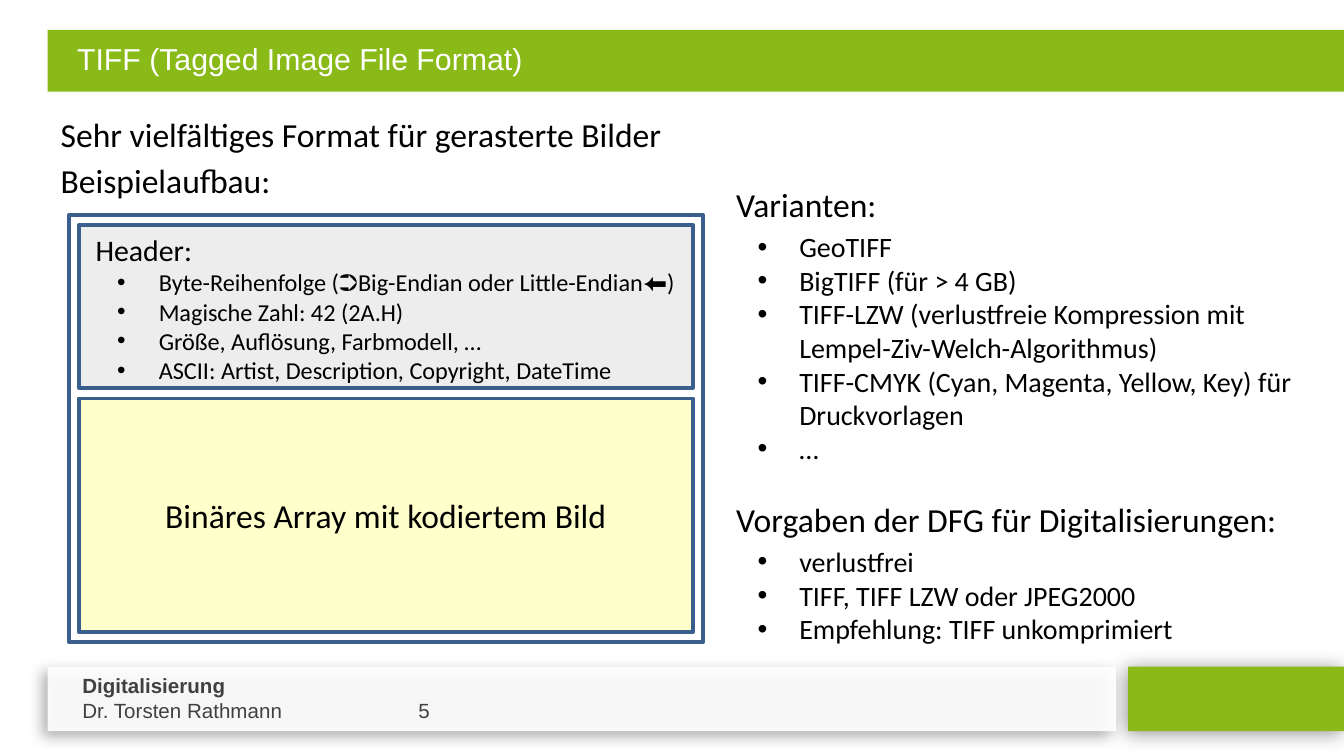
from dataclasses import dataclass

from lxml.etree import SubElement
from pptx import Presentation
from pptx.dml.color import RGBColor
from pptx.enum.shapes import MSO_SHAPE
from pptx.enum.text import MSO_ANCHOR, MSO_AUTO_SIZE, PP_ALIGN
from pptx.oxml.ns import qn
from pptx.util import Inches, Pt

UNIT = 0.1  # inches in one grid column or row


@dataclass(frozen=True)
class Theme:
    green: str = "89BA17"
    white: str = "FFFFFF"
    black: str = "000000"
    dark: str = "404040"
    grey: str = "A6A6A6"
    yellow: str = "FFFF00"
    outline: str = "3A5F8C"
    heading_font: str = "Arial"
    body_font: str = "Calibri"
    title: float = 16.2
    lead: float = 18
    header: float = 16
    item: float = 15
    small_item: float = 13
    footer: float = 11


THEME = Theme()


@dataclass(frozen=True)
class Box:
    """A region in grid columns and rows."""
    left: float
    top: float
    width: float
    height: float

    def inner(self, left, top, width, height):
        return Box(self.left + left, self.top + top, width, height)

    def inches(self):
        return [Inches(side * UNIT)
                for side in (self.left, self.top, self.width, self.height)]


def add_panel(page, box, fill=None, opacity=100, line=None, shadow=None):
    """Shadow is opacity in percent, blur and distance in points, angle in degrees."""
    panel = page.shapes.add_shape(MSO_SHAPE.RECTANGLE, *box.inches())
    panel.shadow.inherit = False
    if fill:
        panel.fill.solid()
        panel.fill.fore_color.rgb = RGBColor.from_string(fill)
        if opacity < 100:
            color = panel.element.spPr.find(".//" + qn("a:srgbClr"))
            SubElement(color, qn("a:alpha"), val=str(opacity * 1000))
    else:
        panel.fill.background()
    if line:
        panel.line.color.rgb = RGBColor.from_string(line)
        panel.line.width = Pt(2)
    else:
        panel.line.fill.background()
    if shadow:
        strength, blur, distance, angle = shadow
        effects = panel.element.spPr.find(qn("a:effectLst"))
        outer = SubElement(effects, qn("a:outerShdw"), blurRad=str(Pt(blur)),
                           dist=str(Pt(distance)), dir=str(angle * 60000),
                           algn="ctr", rotWithShape="0")
        color = SubElement(outer, qn("a:srgbClr"), val=THEME.black)
        SubElement(color, qn("a:alpha"), val=str(strength * 1000))
    return panel


def place_holder(holder, box):
    """Move a placeholder to a box, in front of the panels drawn so far."""
    holder.left, holder.top, holder.width, holder.height = box.inches()
    holder.element.getparent().append(holder.element)
    holder.text_frame.auto_size = MSO_AUTO_SIZE.NONE
    holder.text_frame.vertical_anchor = MSO_ANCHOR.TOP
    return holder.text_frame


def add_text_box(page, box, wrap=True):
    frame = page.shapes.add_textbox(*box.inches()).text_frame
    frame.word_wrap = wrap
    return frame


def write(frame, text, size, font=THEME.body_font, color=THEME.black, bold=False,
          align=PP_ALIGN.LEFT, bullet=False, indent=0, before=0, after=0):
    """Add one paragraph; indent is in inches."""
    first = frame.paragraphs[0]
    para = frame.add_paragraph() if first.runs else first
    para.alignment = align
    para.line_spacing = 1.0
    para.space_before, para.space_after = Pt(before), Pt(after)
    props = para._p.get_or_add_pPr()
    props.set("marL", str(Inches(0.47 if bullet else indent)))
    props.set("indent", str(Inches(-0.31 if bullet else 0)))
    if bullet:
        SubElement(props, qn("a:buFont"), typeface="Arial")
        SubElement(props, qn("a:buChar"), char="•")
    else:
        SubElement(props, qn("a:buNone"))
    span = para.add_run()
    span.text = text
    span.font.name, span.font.size, span.font.bold = font, Pt(size), bold
    span.font.color.rgb = RGBColor.from_string(color)


def write_list(frame, heading, items, heading_size, item_size, before=0, after=0):
    write(frame, heading, heading_size, before=before, after=after)
    for item in items:
        write(frame, item, item_size, bullet=True)


def draw_title(page, box):
    add_panel(page, box, THEME.green)
    frame = place_holder(page.shapes.title, box.inner(0, 0, box.width, 3.5))
    frame.margin_top = Inches(0.08)
    write(frame, "TIFF (Tagged Image File Format)", THEME.title,
          font=THEME.heading_font, color=THEME.white, indent=0.12)


def draw_footer(page, box):
    gap, end_width = 0.9, 16.1
    bar_width = box.width - end_width - gap
    add_panel(page, box.inner(bar_width + gap, 0, end_width, box.height),
              THEME.green, shadow=(42, 10.8, 2, 142))
    add_panel(page, box.inner(0, 0, bar_width, box.height),
              THEME.white, opacity=91, shadow=(34, 7.5, 4, 145))
    frame = add_text_box(page, box.inner(1.6, 0, 59.8, 4.7))
    style = dict(size=THEME.footer, font=THEME.heading_font, color=THEME.dark)
    write(frame, "Digitalisierung", bold=True, **style)
    write(frame, "Dr. Torsten Rathmann\t\t\t5", **style)


def draw_intro(page, box):
    frame = add_text_box(page, box, wrap=False)
    write(frame, "Sehr vielfältiges Format für gerasterte Bilder", THEME.lead, after=3)
    write(frame, "Beispielaufbau:", THEME.lead)


def draw_file_structure(page, box, holder):
    margin, header_height, gap = 0.75, 12.1, 0.8
    width = box.width - 2 * margin
    data_top = margin + header_height + gap
    add_panel(page, box.inner(margin, margin, width, header_height),
              THEME.grey, opacity=20, line=THEME.outline)
    data = add_panel(page, box.inner(margin, data_top, width, box.height - data_top - margin),
                     THEME.yellow, opacity=20, line=THEME.outline)
    data.text_frame.vertical_anchor = MSO_ANCHOR.MIDDLE
    write(data.text_frame, "Binäres Array mit kodiertem Bild", THEME.lead,
          align=PP_ALIGN.CENTER)
    add_panel(page, box, line=THEME.outline)
    frame = place_holder(holder, box.inner(1, margin, 45.4, 12.5))
    write_list(frame, "Header:", [
        "Byte-Reihenfolge (➲Big-Endian oder Little-Endian⬅)",
        "Magische Zahl: 42 (2A.H)",
        "Größe, Auflösung, Farbmodell, …",
        "ASCII: Artist, Description, Copyright, DateTime",
    ], THEME.header, THEME.small_item)


def draw_variants(box, holder):
    frame = place_holder(holder, box)
    write_list(frame, "Varianten:", [
        "GeoTIFF",
        "BigTIFF (für > 4 GB)",
        "TIFF-LZW (verlustfreie Kompression mit Lempel-Ziv-Welch-Algorithmus)",
        "TIFF-CMYK (Cyan, Magenta, Yellow, Key) für Druckvorlagen",
        "…",
    ], THEME.lead, THEME.item, after=3)
    write_list(frame, "Vorgaben der DFG für Digitalisierungen:", [
        "verlustfrei",
        "TIFF, TIFF LZW oder JPEG2000",
        "Empfehlung: TIFF unkomprimiert",
    ], THEME.lead, THEME.item, before=18, after=3)


def main():
    deck = Presentation()
    deck.slide_width = Inches(10)
    deck.slide_height = deck.slide_width * 9 // 16
    page = deck.slides.add_slide(deck.slide_layouts.get_by_name("Two Content"))
    _, header_list, variant_list = page.placeholders
    draw_footer(page, Box(3.54, 49.6, 96.5, 4.8))
    draw_title(page, Box(3.54, 2.22, 96.9, 4.6))
    draw_intro(page, Box(3.53, 8, 47.2, 7.5))
    draw_file_structure(page, Box(5.12, 16, 47.2, 31.8), header_list)
    draw_variants(Box(53.77, 13.18, 44.3, 35.7), variant_list)
    deck.save("out.pptx")


if __name__ == "__main__":
    main()
